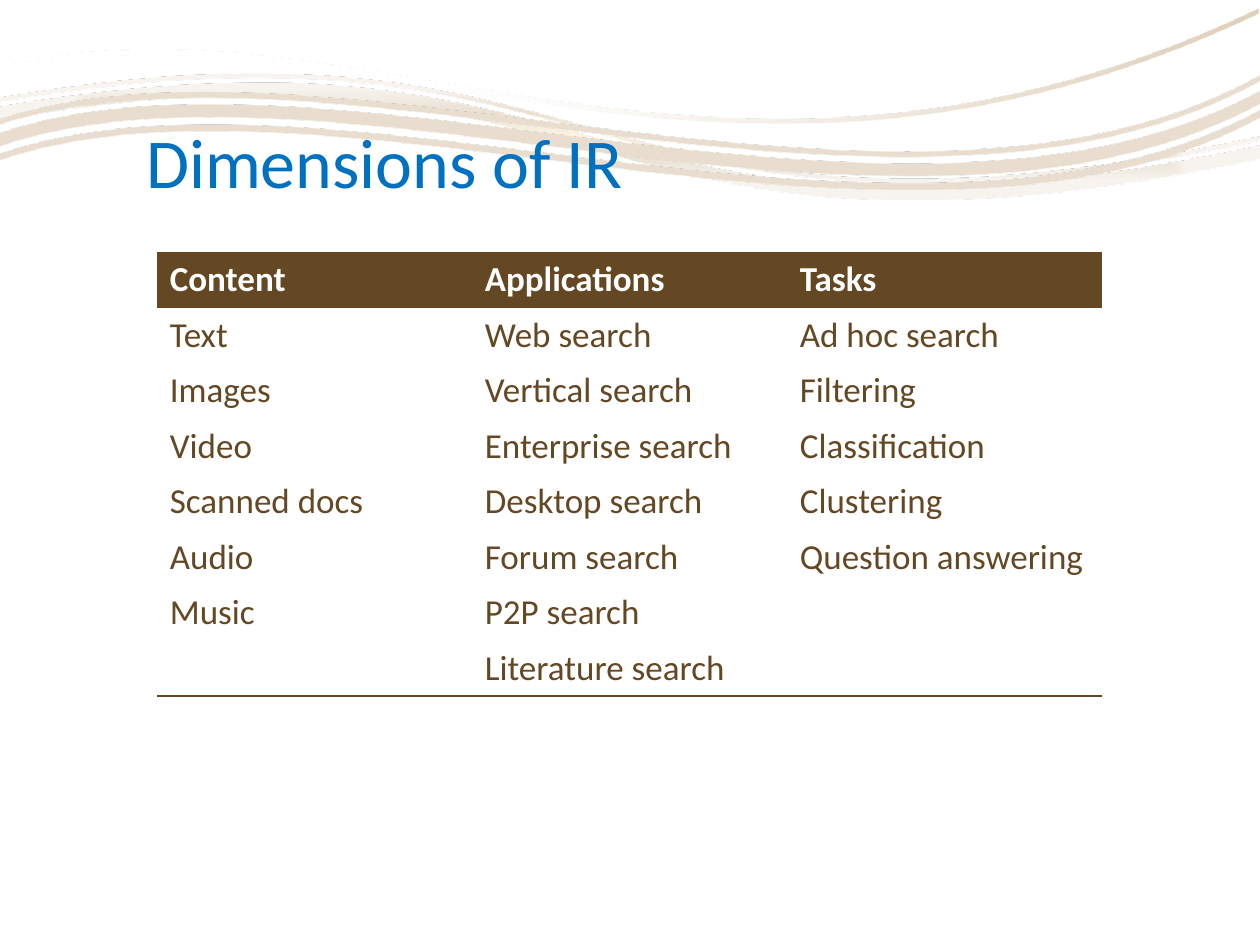
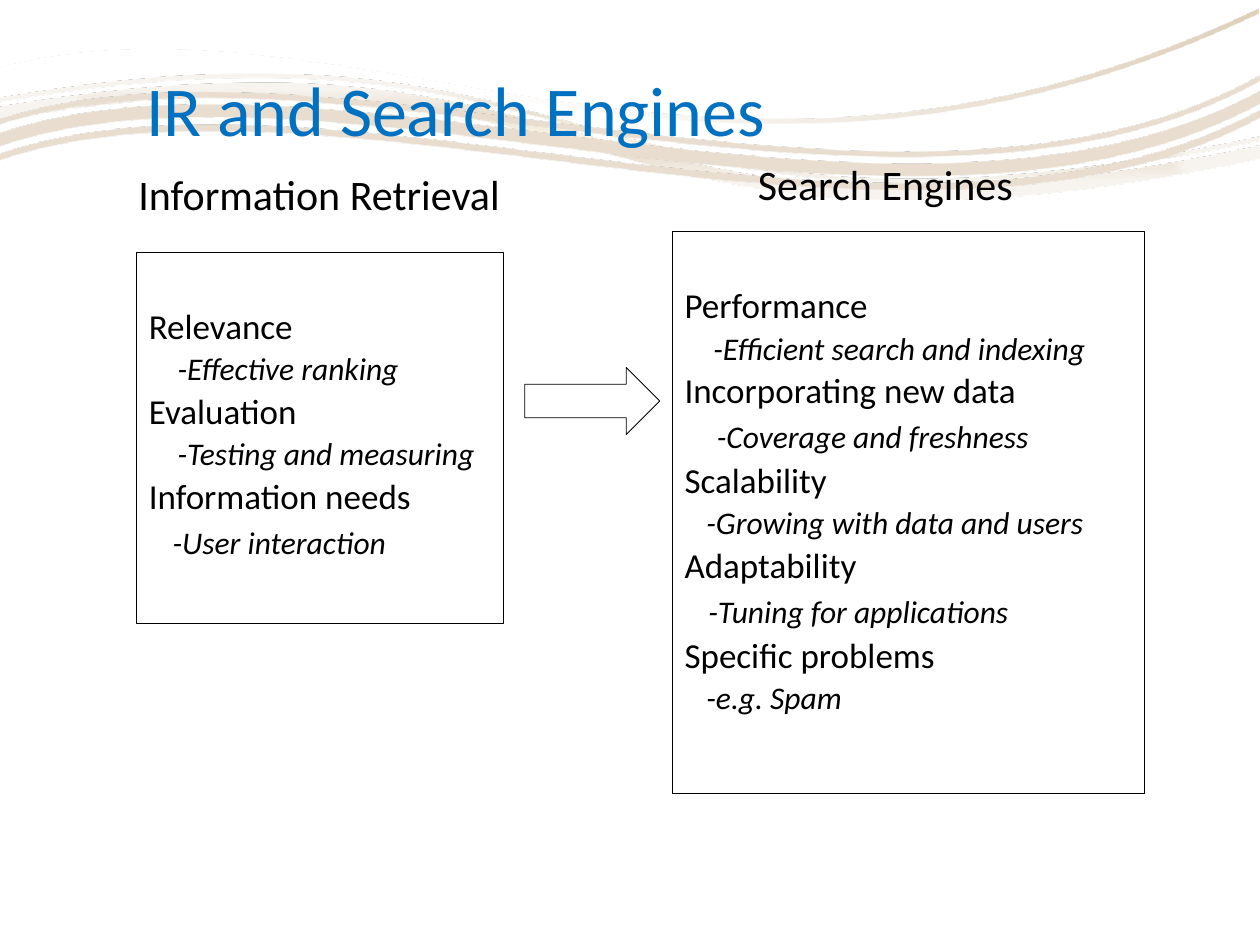
"""Build two slides on information retrieval over a shared ribbon master."""
from dataclasses import dataclass
from math import cos, radians, sin
from typing import Any

from lxml import etree
from pptx import Presentation
from pptx.dml.color import RGBColor
from pptx.enum.shapes import MSO_SHAPE
from pptx.enum.text import MSO_ANCHOR, MSO_AUTO_SIZE, PP_ALIGN
from pptx.oxml import parse_xml
from pptx.oxml.ns import qn
from pptx.util import Cm, Pt

RECT, ARROW = MSO_SHAPE.RECTANGLE, MSO_SHAPE.RIGHT_ARROW
TOP, BOTTOM = MSO_ANCHOR.TOP, MSO_ANCHOR.BOTTOM
LEFT, FIXED = PP_ALIGN.LEFT, MSO_AUTO_SIZE.NONE
FONT = "Calibri"
COLORS = {
    "title": "0070C0", "brown": "634823", "white": "FFFFFF", "black": "000000",
    "cream": "FAF1DF", "sand": "EAE0D2", "mist": "F7F4EF", "tan": "CBB491",
    "beige": "E8DDCE",
}
NS = 'xmlns:a="http://schemas.openxmlformats.org/drawingml/2006/main"'
PLAIN = "{2D5ABB26-0587-4C30-8999-92F81FD0307C}"
INCH = Cm(2.54)
TILT = 3.5

Point = tuple[float, float]
Curve = tuple[Point, Point, Point, Point]
Box = tuple[float, float, float, float]


@dataclass
class Wave:
    frame: Box
    stops: list[tuple[int, str, int]]
    shade: str
    bands: list[list[Curve]]


@dataclass
class Line:
    text: str
    indent: float = 0
    loose: bool = False


@dataclass
class Panel:
    head: str
    spot: Box
    frame: Box
    lines: list[Line]


def focus(kind: str, left: int, top: int, right: int, base: int) -> str:
    sides = zip("ltrb", (left, top, right, base))
    rect = " ".join(f'{side}="{value * 1000}"' for side, value in sides)
    return f'<a:path path="{kind}"><a:fillToRect {rect}/></a:path>'


WAVES = [
    Wave((0.01, 0.39, 9.98, 1.35),
         [(0, "cream", 90), (18, "sand", 100), (37, "mist", 100), (100, "mist", 100)],
         focus("shape", 50, 50, 50, 50), [
        [((2.28, 0.66), (5.02, 0.74), (5.55, 2.1), (10, 1.15)),
         ((10.01, 1.25), (4.54, 2.41), (4.99, 0.1), (-0.01, 0.95)),
         ((-0.01, 0.85), (0.92, 0.69), (1.66, 0.65), (2.28, 0.66))],
        [((2.28, 0.59), (5.02, 0.67), (5.55, 2.03), (10, 1.08)),
         ((10, 1.11), (4.53, 2.27), (4.99, -0.04), (-0.01, 0.81)),
         ((-0.01, 0.78), (0.92, 0.62), (1.66, 0.57), (2.28, 0.59))],
    ]),
    Wave((0.02, 0.15, 10.01, 1.71), [(36, "white", 30), (100, "tan", 100)],
         '<a:lin ang="2700000" scaled="0"/>', [
        [((9.99, 0.11), (5.67, 2.16), (2.78, -0.15), (-0.01, 0.58)),
         ((-0.01, 0.54), (2.78, -0.19), (5.67, 2.12), (9.99, 0.07))],
    ]),
    Wave((0, 0.51, 10.02, 1.15), [(36, "white", 47), (100, "beige", 100)],
         focus("rect", 100, 100, 0, 0), [
        [((10, 0.93), (7.19, 2.45), (2.6, 0.38), (0, 1.27)),
         ((0, 1.22), (2.6, 0.33), (7.19, 2.4), (10, 0.87))],
        [((10, 0.82), (7.19, 2.34), (2.6, 0.27), (0, 1.16)),
         ((-0.01, 1.06), (2.6, 0.17), (7.18, 2.24), (10, 0.72))],
        [((10, 0.64), (7.2, 2.2), (2.62, 0.14), (-0.01, 0.99)),
         ((-0.01, 0.95), (2.62, 0.09), (7.2, 2.16), (9.99, 0.6))],
    ]),
]

ROWS = [
    ("Content", "Applications", "Tasks"),
    ("Text", "Web search", "Ad hoc search"),
    ("Images", "Vertical search", "Filtering"),
    ("Video", "Enterprise search", "Classification"),
    ("Scanned docs", "Desktop search", "Clustering"),
    ("Audio", "Forum search", "Question answering"),
    ("Music", "P2P search", ""),
    ("", "Literature search", ""),
]

PANELS = [
    Panel("Information Retrieval", (2.54, 3.59, 7.87, 1), (2.75, 5.08, 7.41, 7.49), [
        Line("Relevance"), Line("-Effective ranking", 0.58),
        Line("Evaluation"), Line("-Testing and measuring", 0.58),
        Line("Information needs"), Line("-User interaction", 0.48, True),
    ]),
    Panel("Search Engines", (15.03, 3.38, 5.72, 1), (13.55, 4.66, 9.52, 11.33), [
        Line("Performance"), Line("-Efficient search and indexing", 0.58),
        Line("Incorporating new data"), Line("-Coverage and freshness", 0.65, True),
        Line("Scalability"), Line("-Growing with data and users", 0.44),
        Line("Adaptability"), Line("-Tuning for applications", 0.48, True),
        Line("Specific problems"), Line("-e.g. Spam", 0.44),
    ]),
]


def apply(target: Any, **values: Any) -> None:
    for name, value in values.items():
        setattr(target, name, value)


def place(spot: Box) -> list[Cm]:
    return [Cm(value) for value in spot]


def ink(part: Any, size: float, color: str, **values: Any) -> None:
    apply(part.font, name=FONT, size=Pt(size), **values)
    part.font.color.rgb = RGBColor.from_string(COLORS[color])


def local(point: Point, frame: Box) -> Point:
    left, top, width, height = frame
    x, y = point[0] - left - width / 2, point[1] - top - height / 2
    c, s = cos(radians(TILT)), sin(radians(TILT))
    return x * c - y * s + width / 2, x * s + y * c + height / 2


def add_step(track: Any, kind: str, points: list[Point], frame: Box) -> None:
    step = etree.SubElement(track, qn(f"a:{kind}"))
    for point in points:
        x, y = (str(round(value * INCH)) for value in local(point, frame))
        etree.SubElement(step, qn("a:pt"), x=x, y=y)


def draw_bands(track: Any, wave: Wave) -> None:
    for child in list(track):
        track.remove(child)
    for band in wave.bands:
        for index, (start, *rest) in enumerate(band):
            add_step(track, "lnTo" if index else "moveTo", [start], wave.frame)
            add_step(track, "cubicBezTo", rest, wave.frame)
        etree.SubElement(track, qn("a:close"))


def blend(wave: Wave) -> Any:
    stops = "".join(
        f'<a:gs pos="{pos * 1000}"><a:srgbClr val="{COLORS[color]}">'
        f'<a:alpha val="{alpha * 1000}"/></a:srgbClr></a:gs>'
        for pos, color, alpha in wave.stops)
    return parse_xml(f'<a:gradFill {NS} rotWithShape="1">'
                     f'<a:gsLst>{stops}</a:gsLst>{wave.shade}</a:gradFill>')


def add_waves(slide: Any, master: Any) -> None:
    for index, wave in enumerate(WAVES):
        left, top, width, height = (value * INCH for value in wave.frame)
        right, base = left + width, top + height
        pen = slide.shapes.build_freeform(left, top)
        pen.add_line_segments([(right, top), (right, base), (left, base)])
        shape = pen.convert_to_shape()
        apply(shape, name=f"Ribbon {index + 1}", rotation=-TILT)
        draw_bands(shape.element.xpath(".//a:pathLst/a:path")[0], wave)
        shape.shadow.inherit = False
        shape.line.fill.background()
        shape.fill.background()
        props = shape.element.find(qn("p:spPr"))
        props.replace(props.find(qn("a:noFill")), blend(wave))
        shape.element.xpath(".//p:cNvPr")[0].set("id", str(20 + index))
        master.shapes.element.insert(2 + index, shape.element)


def add_title(slide: Any, text: str, height: float) -> None:
    title = slide.shapes.title
    left, top, width, tall = place((2.69, 0.84, 20.02, height))
    apply(title, left=left, top=top, width=width, height=tall)
    apply(title.text_frame, text=text, vertical_anchor=BOTTOM, auto_size=FIXED)
    para = title.text_frame.paragraphs[0]
    apply(para, alignment=LEFT, line_spacing=0.9)
    ink(para.runs[0], 40, "title")


def add_grid(slide: Any) -> None:
    count, last = len(ROWS), len(ROWS) - 1
    frame = slide.shapes.add_table(
        count, 3, *place((3.17, 5.08, 19.05, 1.1 * count)))
    frame.element.xpath(".//a:tableStyleId")[0].text = PLAIN
    apply(frame.table, horz_banding=False)
    for row, texts in enumerate(ROWS):
        for col, text in enumerate(texts):
            cell = frame.table.cell(row, col)
            if row == 0:
                cell.fill.solid()
                cell.fill.fore_color.rgb = RGBColor.from_string(COLORS["brown"])
            else:
                cell.fill.background()
            if text:
                cell.text = text
                ink(cell.text_frame.paragraphs[0].runs[0], 20,
                    "brown" if row else "white", bold=row == 0)
            if row == last:
                add_rule(cell)


def add_rule(cell: Any) -> None:
    edge = etree.Element(qn("a:lnB"), w=str(Pt(1)))
    fill = etree.SubElement(edge, qn("a:solidFill"))
    etree.SubElement(fill, qn("a:srgbClr"), val=COLORS["brown"])
    cell._tc.get_or_add_tcPr().insert(0, edge)


def add_shape(slide: Any, kind: Any, spot: Box) -> Any:
    shape = slide.shapes.add_shape(kind, *place(spot))
    shape.shadow.inherit = False
    shape.fill.background()
    shape.line.width = Pt(0.5)
    shape.line.color.rgb = RGBColor.from_string(COLORS["black"])
    return shape


def add_panel(slide: Any, panel: Panel) -> None:
    frame = add_shape(slide, RECT, panel.frame).text_frame
    apply(frame, word_wrap=True, auto_size=FIXED, vertical_anchor=TOP,
          margin_top=Cm(1.33))
    for index, line in enumerate(panel.lines):
        para = frame.paragraphs[0] if index == 0 else frame.add_paragraph()
        apply(para, alignment=LEFT, line_spacing=0.65)
        sub = line.indent > 0
        if index:
            para.space_before = Pt(11.2 if line.loose else 9.2 if sub else 9.7)
        if line.loose:
            para.space_after = Pt(0.8)
        if sub:
            props = para._p.get_or_add_pPr()
            props.set("marL", str(Cm(line.indent)))
            props.set("indent", "0")
        run = para.add_run()
        run.text = line.text
        ink(run, 18 if sub else 20, "black", italic=sub)


def add_label(slide: Any, panel: Panel) -> None:
    label = slide.shapes.add_textbox(*place(panel.spot)).text_frame
    apply(label, text=panel.head, word_wrap=False, vertical_anchor=TOP)
    para = label.paragraphs[0]
    apply(para, alignment=LEFT, line_spacing=0.65)
    ink(para.runs[0], 24, "black")


def main() -> None:
    deck = Presentation()
    apply(deck, slide_width=Cm(25.4), slide_height=Cm(19.05))
    layout = deck.slide_layouts[5]

    facets = deck.slides.add_slide(layout)
    add_waves(facets, deck.slide_master)
    add_title(facets, "Dimensions of IR", 3.39)
    add_grid(facets)

    engines = deck.slides.add_slide(layout)
    add_title(engines, "IR and Search Engines", 2.34)
    for panel in PANELS:
        add_panel(engines, panel)
    add_shape(engines, ARROW, (10.58, 7.41, 2.72, 1.35))
    for panel in PANELS:
        add_label(engines, panel)

    deck.save("out.pptx")


if __name__ == "__main__":
    main()
